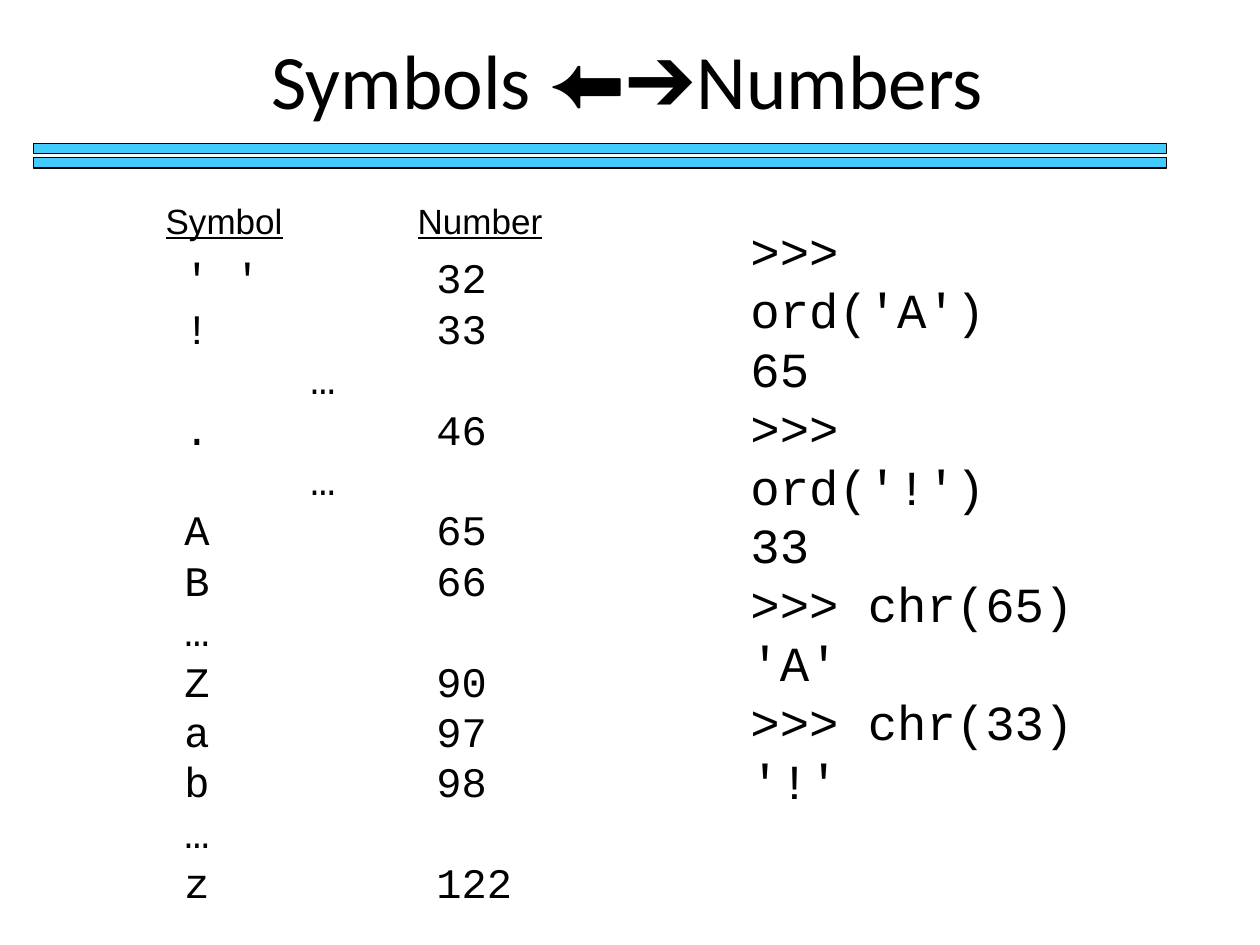
"""Build the slide on converting between symbols and numbers."""
from dataclasses import dataclass

from lxml import etree
from pptx import Presentation
from pptx.dml.color import RGBColor
from pptx.enum import shapes, text
from pptx.oxml import ns
from pptx.util import Cm, Pt


@dataclass(frozen=True)
class Theme:
    ink: RGBColor = RGBColor(0, 0, 0)
    bar: RGBColor = RGBColor(0x42, 0xCB, 0xFD)
    title: Pt = Pt(44)
    heading: Pt = Pt(20)
    table: Pt = Pt(24)
    code: Pt = Pt(28)
    sans: str = "Arial"
    mono: str = "Courier New"
    display: str = "Calibri"


theme = Theme()


def style(span, font, size):
    span.font.name = font
    span.font.size = size
    span.font.color.rgb = theme.ink


def add_lines(page, left, top, width, height, lines, font, size):
    box = page.shapes.add_textbox(Cm(left), Cm(top), Cm(width), Cm(height))
    frame = box.text_frame
    frame.word_wrap = True
    frame.margin_left = frame.margin_right = Cm(0.11)
    frame.margin_top = frame.margin_bottom = 0
    frame.text = "\n".join(lines)
    for para in frame.paragraphs:
        stops = etree.SubElement(para._p.get_or_add_pPr(), ns.qn("a:tabLst"))
        for column in (1, 2, 3):
            etree.SubElement(stops, ns.qn("a:tab"), pos=str(Cm(2.54 * column)), algn="l")
        for span in para.runs:
            style(span, font, size)
    return frame


deck = Presentation()
deck.slide_width, deck.slide_height = Cm(25.4), Cm(19.05)
page = deck.slides.add_slide(deck.slide_layouts[5])

title = page.shapes.title
title.left, title.top, title.width, title.height = Cm(1.9), Cm(0), Cm(21.6), Cm(3.18)
frame = title.text_frame
frame.vertical_anchor = text.MSO_ANCHOR.MIDDLE
frame.margin_left, frame.margin_right = Cm(0.25), Cm(0.36)
frame.margin_top = frame.margin_bottom = Cm(0.13)
para = frame.paragraphs[0]
para.alignment = text.PP_ALIGN.CENTER
for words, font in (("Symbols ", theme.display), ("⬅➔", theme.sans), ("Numbers", theme.display)):
    span = para.add_run()
    span.text = words
    style(span, font, theme.title)

bars = page.shapes.add_group_shape()
for top in (2.89, 3.18):
    bar = bars.shapes.add_shape(
        shapes.MSO_SHAPE.RECTANGLE, Cm(0.67), Cm(top), Cm(22.84), Cm(0.21))
    bar.shadow.inherit = False
    bar.fill.solid()
    bar.fill.fore_color.rgb = theme.bar
    bar.line.color.rgb = theme.ink
    bar.line.width = Pt(0.75)

heading = add_lines(page, 3.23, 4.02, 8.18, 1.07, ["Symbol"], theme.sans, theme.heading)
para = heading.paragraphs[0]
for words in ("\t\t", "Number"):
    span = para.add_run()
    span.text = words
    style(span, theme.sans, theme.heading)
for span in para.runs:
    span.font.underline = bool(span.text.strip())

codes = [
    "' '\t\t32", "!\t\t33", "\t…", ".\t\t46", "\t…", "A\t\t65", "B\t\t66\t…",
    "Z\t\t90", "a\t\t97", "b\t\t98\t…", "z\t\t122",
]
add_lines(page, 3.61, 5.08, 8.18, 13.13, codes, theme.mono, theme.table)

session = []
for call, result in (("ord('A')", "65"), ("ord('!')", "33"), ("chr(65)", "'A'"), ("chr(33)", "'!'")):
    session += [f">>> {call}", result]
add_lines(page, 15.02, 4.45, 7.28, 9.5, session, theme.mono, theme.code)

deck.save("out.pptx")
